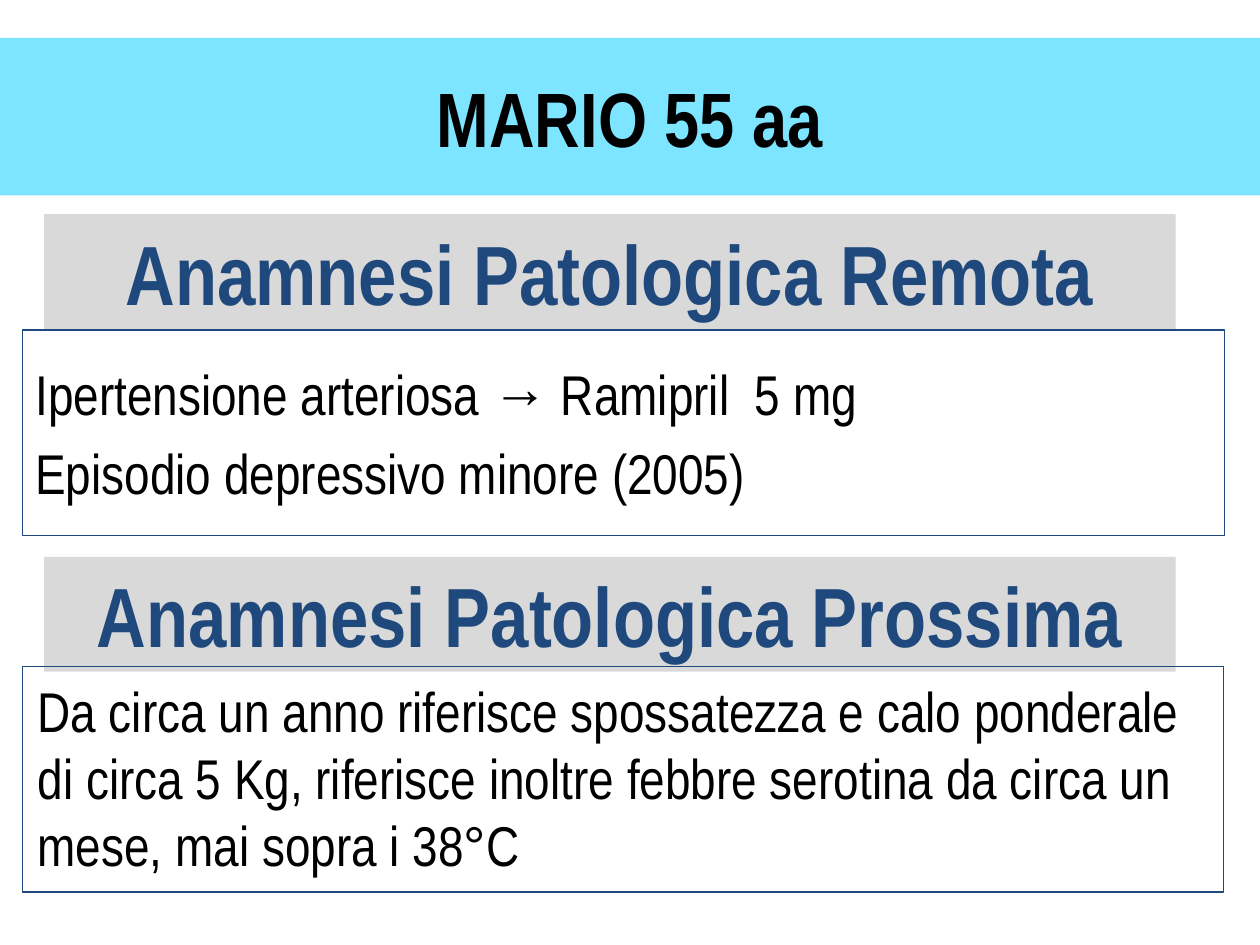
"""Build the case history slide for Mario."""
import pptx
import pptx.util
import pptx.dml.color
import pptx.enum.shapes
import pptx.enum.text
import pptx.oxml
import pptx.oxml.ns

Inches = pptx.util.Inches
Pt = pptx.util.Pt
RGBColor = pptx.dml.color.RGBColor
RECT = pptx.enum.shapes.MSO_SHAPE.RECTANGLE
CENTER = pptx.enum.text.PP_ALIGN.CENTER
LEFT = pptx.enum.text.PP_ALIGN.LEFT
MIDDLE = pptx.enum.text.MSO_ANCHOR.MIDDLE
TOP = pptx.enum.text.MSO_ANCHOR.TOP
CYAN = RGBColor(0x00, 0xCC, 0xFF)
NAVY = RGBColor(0x1F, 0x49, 0x7D)
GREY = RGBColor(0xD9, 0xD9, 0xD9)
BLACK = RGBColor(0, 0, 0)


def place(shape, left, top, width, height):
    shape.left, shape.top = Inches(left), Inches(top)
    shape.width, shape.height = Inches(width), Inches(height)


def write(shape, lines, size, color, bold, align, anchor):
    frame = shape.text_frame
    frame.text = "\n".join(lines)
    frame.word_wrap = True
    frame.auto_size = pptx.enum.text.MSO_AUTO_SIZE.NONE
    frame.vertical_anchor = anchor
    for para in frame.paragraphs:
        para.alignment = align
        para.font.name = "Arial Narrow"
        para.font.size = Pt(size)
        para.font.bold = bold
        para.font.color.rgb = color


deck = pptx.Presentation()
deck.slide_width, deck.slide_height = Inches(10), Inches(7.5)
slide = deck.slides.add_slide(deck.slide_layouts[1])
shapes = slide.shapes

title = shapes.title
place(title, 0, 0.3, 10, 1.25)
title.fill.solid()
title.fill.fore_color.rgb = CYAN
tint = title.fill._xPr.find(".//" + pptx.oxml.ns.qn("a:srgbClr"))
tint.append(pptx.oxml.parse_xml(
    f'<a:alpha {pptx.oxml.ns.nsdecls("a")} val="51000"/>'))
write(title, ["MARIO 55 aa"], 44, BLACK, True, CENTER, MIDDLE)

past = slide.placeholders[1]
place(past, 0.18, 2.62, 9.54, 1.63)
write(past, ["Ipertensione arteriosa → Ramipril  5 mg",
             "Episodio depressivo minore (2005)"],
      32, BLACK, False, LEFT, MIDDLE)
for para in past.text_frame.paragraphs:
    props = para._p.get_or_add_pPr()
    props.set("marL", "0")
    props.set("indent", "0")
    props.insert_element_before(
        pptx.oxml.parse_xml(f'<a:buNone {pptx.oxml.ns.nsdecls("a")}/>'),
        "a:tabLst", "a:defRPr", "a:extLst")

for top, word in ((1.7, "Remota"), (4.42, "Prossima")):
    head = shapes.add_shape(RECT, Inches(0.35), Inches(top),
                            Inches(8.98), Inches(0.91))
    head.shadow.inherit = False
    head.fill.solid()
    head.fill.fore_color.rgb = GREY
    head.line.fill.background()
    write(head, [f"Anamnesi Patologica {word}"], 48, NAVY, True, CENTER, MIDDLE)

frame = shapes.add_shape(RECT, Inches(0.18), Inches(5.29),
                         Inches(9.53), Inches(1.79))
frame.shadow.inherit = False
frame.fill.background()
for box in (past, frame):
    box.line.color.rgb = NAVY
    box.line.width = Pt(0.75)

recent = shapes.add_textbox(Inches(0.2), Inches(5.32), Inches(9.53), Inches(1.72))
write(recent, ["Da circa un anno riferisce spossatezza e calo ponderale "
               "di circa 5 Kg, riferisce inoltre febbre serotina da circa un "
               "mese, mai sopra i 38°C"],
      32, BLACK, False, LEFT, TOP)

deck.save("out.pptx")
